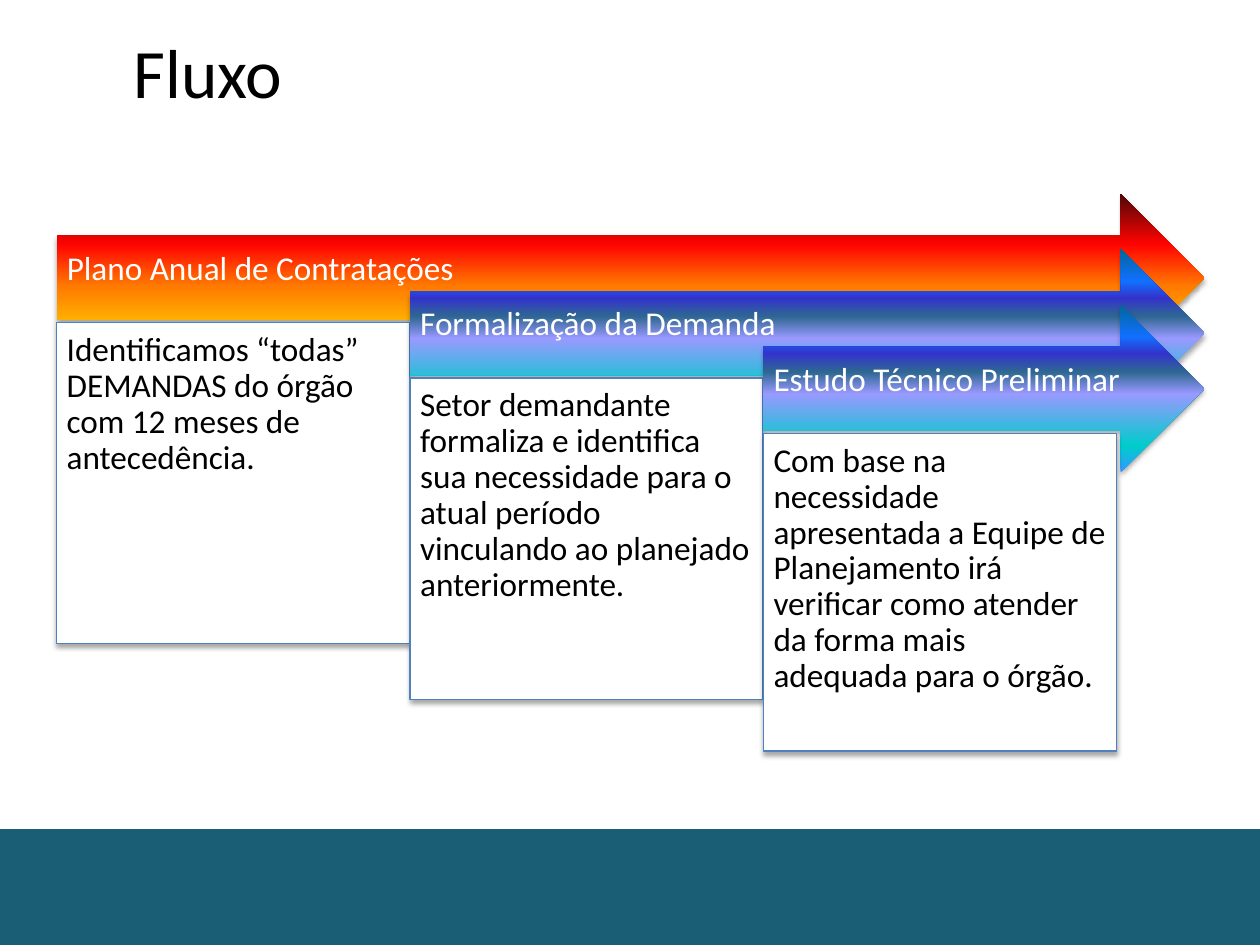
import pptx
import pptx.util
from lxml import etree
from pptx.dml.color import RGBColor
from pptx.enum.shapes import MSO_SHAPE
from pptx.enum.text import MSO_ANCHOR, PP_ALIGN
from pptx.oxml.ns import qn
from pptx.util import Inches, Pt

FONT = "Calibri"
WARM = [(0, "FFF200"), (45, "FF7A00"), (70, "FF0300"), (100, "4D0808")]
COOL = [(0, "3399FF"), (16, "00CCCC"), (47, "9999FF"), (60, "2E6792"),
        (71, "3333CC"), (81, "1170FF"), (100, "006699")]

# heading, description, arrow gradient, description height
STEPS = [
    ("Plano Anual de Contratações",
     "Identificamos “todas” DEMANDAS do órgão com 12 meses de antecedência.",
     WARM, 2.55),
    ("Formalização da Demanda",
     "Setor demandante formaliza e identifica sua necessidade para o atual "
     "período vinculando ao planejado anteriormente.",
     COOL, 2.55),
    ("Estudo Técnico Preliminar",
     "Com base na necessidade apresentada a Equipe de Planejamento irá "
     "verificar como atender da forma mais adequada para o órgão.",
     COOL, 2.52),
]
LEFT, TOP, RIGHT = 0.45, 1.54, 9.56
STEP_X, STEP_Y = 2.805, 0.44
ARROW_HEIGHT, BOX_DROP, BOX_WIDTH = 1.33, 1.02, 2.8


def color(value):
    return RGBColor.from_string(value)


def add_stop_color(parent, value):
    return etree.SubElement(parent, qn("a:srgbClr"), val=value)


def add_shape(slide, kind, left, top, width, height):
    shape = slide.shapes.add_shape(
        kind, Inches(left), Inches(top), Inches(width), Inches(height))
    shape.shadow.inherit = False
    shape.line.fill.background()
    return shape


def set_solid(shape, value):
    shape.fill.solid()
    shape.fill.fore_color.rgb = color(value)


def set_gradient(shape, stops):
    """Fill from bottom to top with (percent, colour) stops."""
    shape.fill.gradient()
    shape.fill.gradient_angle = 90
    stop_list = shape._element.spPr.find(".//" + qn("a:gsLst"))
    for stop in list(stop_list):
        stop_list.remove(stop)
    for percent, value in stops:
        stop = etree.SubElement(stop_list, qn("a:gs"), pos=str(percent * 1000))
        add_stop_color(stop, value)


def add_shadow(shape):
    effects = shape._element.spPr.find(qn("a:effectLst"))
    shadow = etree.SubElement(
        effects, qn("a:outerShdw"), blurRad=str(Pt(3.1)), dist=str(Pt(1.8)),
        dir="5400000", rotWithShape="0")
    etree.SubElement(add_stop_color(shadow, "000000"), qn("a:alpha"), val="35000")


def write(shape, text, size, value, anchor, bottom=0.08):
    frame = shape.text_frame
    frame.word_wrap = True
    frame.vertical_anchor = anchor
    frame.margin_left = frame.margin_top = frame.margin_right = Inches(0.08)
    frame.margin_bottom = Inches(bottom)
    para = frame.paragraphs[0]
    para.text = text
    para.alignment = PP_ALIGN.LEFT
    para.line_spacing = 0.9
    para.font.name = FONT
    para.font.size = Pt(size)
    para.font.color.rgb = color(value)


def add_step(slide, index, heading, description, stops, box_height):
    left, top = LEFT + index * STEP_X, TOP + index * STEP_Y
    arrow = add_shape(slide, MSO_SHAPE.RIGHT_ARROW, left, top,
                      RIGHT - left, ARROW_HEIGHT)
    set_gradient(arrow, stops)
    add_shadow(arrow)
    write(arrow, heading, 19, "FFFFFF", MSO_ANCHOR.MIDDLE, bottom=0.21)

    box = add_shape(slide, MSO_SHAPE.RECTANGLE, left, top + BOX_DROP,
                    BOX_WIDTH, box_height)
    set_solid(box, "FFFFFF")
    box.line.color.rgb = color("4F81BD")
    box.line.width = Pt(0.75)
    add_shadow(box)
    write(box, description, 19, "000000", MSO_ANCHOR.TOP)


def main():
    deck = pptx.Presentation()
    deck.slide_width, deck.slide_height = Inches(10), Inches(7.5)
    slide = deck.slides.add_slide(deck.slide_layouts[5])

    title = slide.shapes.title
    title.left, title.top = Inches(0.98), Inches(0.21)
    title.width, title.height = Inches(8.35), Inches(0.79)
    write(title, "Fluxo", 39.6, "000000", MSO_ANCHOR.MIDDLE)

    footer = add_shape(slide, MSO_SHAPE.RECTANGLE, 0, 6.58, 10, 0.92)
    set_solid(footer, "1A5E75")

    for index, step in enumerate(STEPS):
        add_step(slide, index, *step)
    deck.save("out.pptx")


if __name__ == "__main__":
    main()
